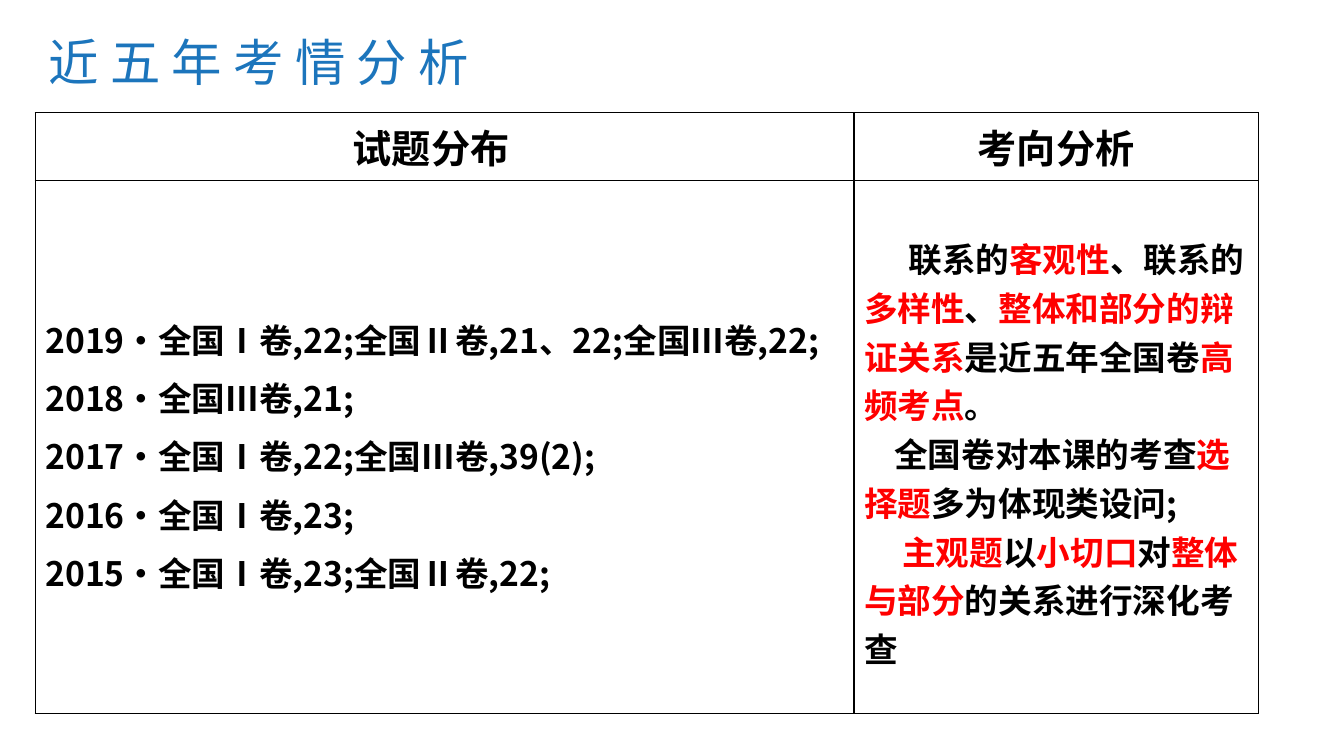
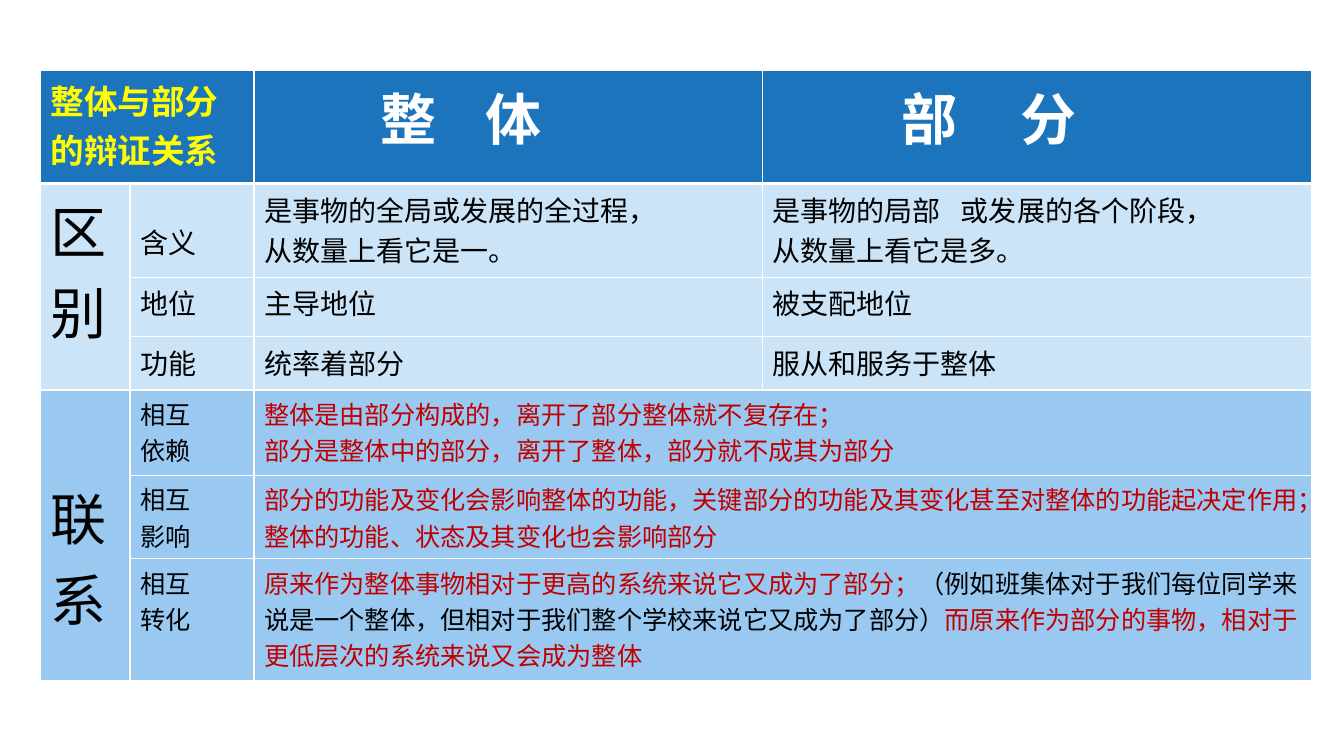
from pptx import Presentation
from pptx.dml.color import RGBColor
from pptx.enum.text import MSO_ANCHOR, PP_ALIGN
from pptx.oxml.ns import qn
from pptx.util import Inches, Pt
from lxml.etree import SubElement

COLORS = {
    "black": "000000", "white": "FFFFFF", "red": "FF0000", "crimson": "C00000",
    "yellow": "FFFF00", "blue": "1C75BC", "pale": "CCE4F7", "sky": "99C9F0",
}
CJK = "Noto Sans CJK SC"


def rgb(name):
    return RGBColor.from_string(COLORS[name])


def style_font(paragraph, size, color="black", bold=False, latin=CJK, asian=CJK, tracking=0):
    font = paragraph.font
    font.size = Pt(size)
    font.bold = bold
    font.color.rgb = rgb(color)
    font.name = latin
    properties = paragraph._p.pPr.find(qn("a:defRPr"))
    SubElement(properties, qn("a:ea")).set("typeface", asian)
    if tracking:
        properties.set("spc", str(tracking * 100))


def write_runs(paragraph, parts):
    for part in parts:
        text, color, tracking = (part, None, 0) if isinstance(part, str) else (*part, 0)[:3]
        run = paragraph.add_run()
        run.text = text
        if color:
            run.font.color.rgb = rgb(color)
        if tracking:
            run._r.get_or_add_rPr().set("spc", str(tracking * 100))


def write_cell(cell, lines, size, top=0.05, left=0.1, right=0.1, align=PP_ALIGN.LEFT,
               spacing=None, indents=(), **font):
    cell.margin_top, cell.margin_left, cell.margin_right = Inches(top), Inches(left), Inches(right)
    frame = cell.text_frame
    for index, line in enumerate(lines):
        paragraph = frame.add_paragraph() if index else frame.paragraphs[0]
        paragraph.alignment = align
        if spacing:
            paragraph.line_spacing = spacing
        if indents:
            paragraph._p.get_or_add_pPr().set("indent", str(Inches(indents[index])))
        style_font(paragraph, size, **font)
        write_runs(paragraph, [line] if isinstance(line, str) else line)


def set_borders(cell, color, bottom=1, top=1):
    properties = cell._tc.get_or_add_tcPr()
    for side, width in (("L", 1), ("R", 1), ("T", top), ("B", bottom)):
        line = SubElement(properties, qn(f"a:ln{side}"), w=str(Pt(width)))
        SubElement(SubElement(line, qn("a:solidFill")), qn("a:srgbClr"), val=COLORS[color])


def add_grid(slide, left, top, widths, heights):
    table = slide.shapes.add_table(
        len(heights), len(widths), Inches(left), Inches(top),
        Inches(sum(widths)), Inches(sum(heights))).table
    table.first_row = table.horz_banding = False
    for column, width in zip(table.columns, widths):
        column.width = Inches(width)
    for row, height in zip(table.rows, heights):
        row.height = Inches(height)
    return table


def add_title(slide, text, left, top, width, height):
    title = slide.shapes.title
    title.left, title.top, title.width, title.height = map(Inches, (left, top, width, height))
    title.text_frame.text = text
    title.text_frame.vertical_anchor = MSO_ANCHOR.MIDDLE
    paragraph = title.text_frame.paragraphs[0]
    paragraph.alignment = PP_ALIGN.LEFT
    style_font(paragraph, 36, "blue", latin="Noto Sans CJK JP", asian="Noto Sans CJK JP")


def add_exam_table(slide, left, top):
    table = add_grid(slide, left, top, [8.12, 4.01], [0.67, 5.29])
    for cell in table.iter_cells():
        set_borders(cell, "black")
        cell.fill.background()
    write_cell(table.cell(0, 0), ["试题分布"], 28, right=0.37, align=PP_ALIGN.CENTER, bold=True)
    write_cell(table.cell(0, 1), ["考向分析"], 28, align=PP_ALIGN.CENTER, bold=True)
    write_cell(table.cell(1, 0), [
        "2019·全国Ⅰ卷,22;全国Ⅱ卷,21、22;全国Ⅲ卷,22;",
        "2018·全国Ⅲ卷,21;",
        "2017·全国Ⅰ卷,22;全国Ⅲ卷,39(2);",
        "2016·全国Ⅰ卷,23;",
        "2015·全国Ⅰ卷,23;全国Ⅱ卷,22;",
    ], 24, top=1.23, spacing=1.2, bold=True)
    write_cell(table.cell(1, 1), [
        ["联系的", ("客观性", "red"), "、联系的", ("多样性", "red"), "、",
         ("整体和部分的辩证关系", "red"), "是近五年全国卷", ("高频考点", "red"), "。"],
        ["全国卷对本课的考查", ("选择题", "red"), "多为体现类设问;"],
        [("主观题", "red"), "以", ("小切口", "red"), "对", ("整体与部分", "red"),
         "的关系进行深化考查"],
    ], 24, top=0.53, indents=(0.44, 0.3, 0.38), bold=True)


def add_comparison_table(slide, left, top):
    table = add_grid(slide, left, top, [0.89, 1.23, 5.04, 5.45],
                     [1.12, 0.93, 0.59, 0.53, 0.85, 0.8, 1.21])
    row_fills = ["blue"] + ["pale"] * 3 + ["sky"] * 3
    for row, fill in enumerate(row_fills):
        for column in range(4):
            cell = table.cell(row, column)
            set_borders(cell, "white", bottom=1 if row else 3, top=3 if row == 1 else 1)
            cell.fill.solid()
            cell.fill.fore_color.rgb = rgb(fill)
    table.cell(0, 0).merge(table.cell(0, 1))
    for row in (1, 4):
        table.cell(row, 0).merge(table.cell(row + 2, 0))
    for row in (4, 5, 6):
        table.cell(row, 2).merge(table.cell(row, 3))

    write_cell(table.cell(0, 0), ["整体与部分", "的辩证关系"], 24,
               color="yellow", bold=True, latin="Arial")
    for column, heading, indent, tracking in ((2, "整 体", 1.25, 13), (3, "部 分", 1.38, 18)):
        write_cell(table.cell(0, column), [heading], 40, left=indent, color="white",
                   bold=True, latin="Arial", tracking=tracking)
    write_cell(table.cell(1, 0), ["区别"], 40)
    write_cell(table.cell(4, 0), ["联系"], 40, top=0.85)

    differences = [
        ("含义", ["是事物的全局或发展的全过程，", "从数量上看它是一。"],
         [["是事物的局部", (" ", None, 10), "或发展的各个阶段，"], "从数量上看它是多。"]),
        ("地位", ["主导地位"], ["被支配地位"]),
        ("功能", ["统率着部分"], ["服从和服务于整体"]),
    ]
    for row, (aspect, whole, part) in enumerate(differences, 1):
        write_cell(table.cell(row, 1), [aspect], 20, top=0.37 if row == 1 else 0.05)
        write_cell(table.cell(row, 2), whole, 20)
        write_cell(table.cell(row, 3), part, 20)

    connections = [
        ("依赖", ["整体是由部分构成的，离开了部分整体就不复存在；",
                "部分是整体中的部分，离开了整体，部分就不成其为部分"]),
        ("影响", ["部分的功能及变化会影响整体的功能，关键部分的功能及其变化甚至对整体的功能起决定作用；"
                "整体的功能、状态及其变化也会影响部分"]),
        ("转化", [["原来作为整体事物相对于更高的系统来说它又成为了部分；",
                 ("（例如班集体对于我们每位同学来说是一个整体，但相对于我们整个学校来说它又成为了部分）", "black"),
                 "而原来作为部分的事物，相对于更低层次的系统来说又会成为整体"]]),
    ]
    for row, (relation, explanation) in enumerate(connections, 4):
        write_cell(table.cell(row, 1), ["相互", relation], 18)
        write_cell(table.cell(row, 2), explanation, 18, color="crimson")


def main():
    deck = Presentation()
    deck.slide_width, deck.slide_height = Inches(13.33), Inches(7.5)
    exam_slide = deck.slides.add_slide(deck.slide_layouts[5])
    add_exam_table(exam_slide, 0.35, 1.12)
    add_title(exam_slide, "近 五 年 考 情 分 析", 0.38, 0.25, 8.63, 0.71)
    comparison_slide = deck.slides.add_slide(deck.slide_layouts[6])
    add_comparison_table(comparison_slide, 0.4, 0.7)
    deck.save("out.pptx")


if __name__ == "__main__":
    main()
